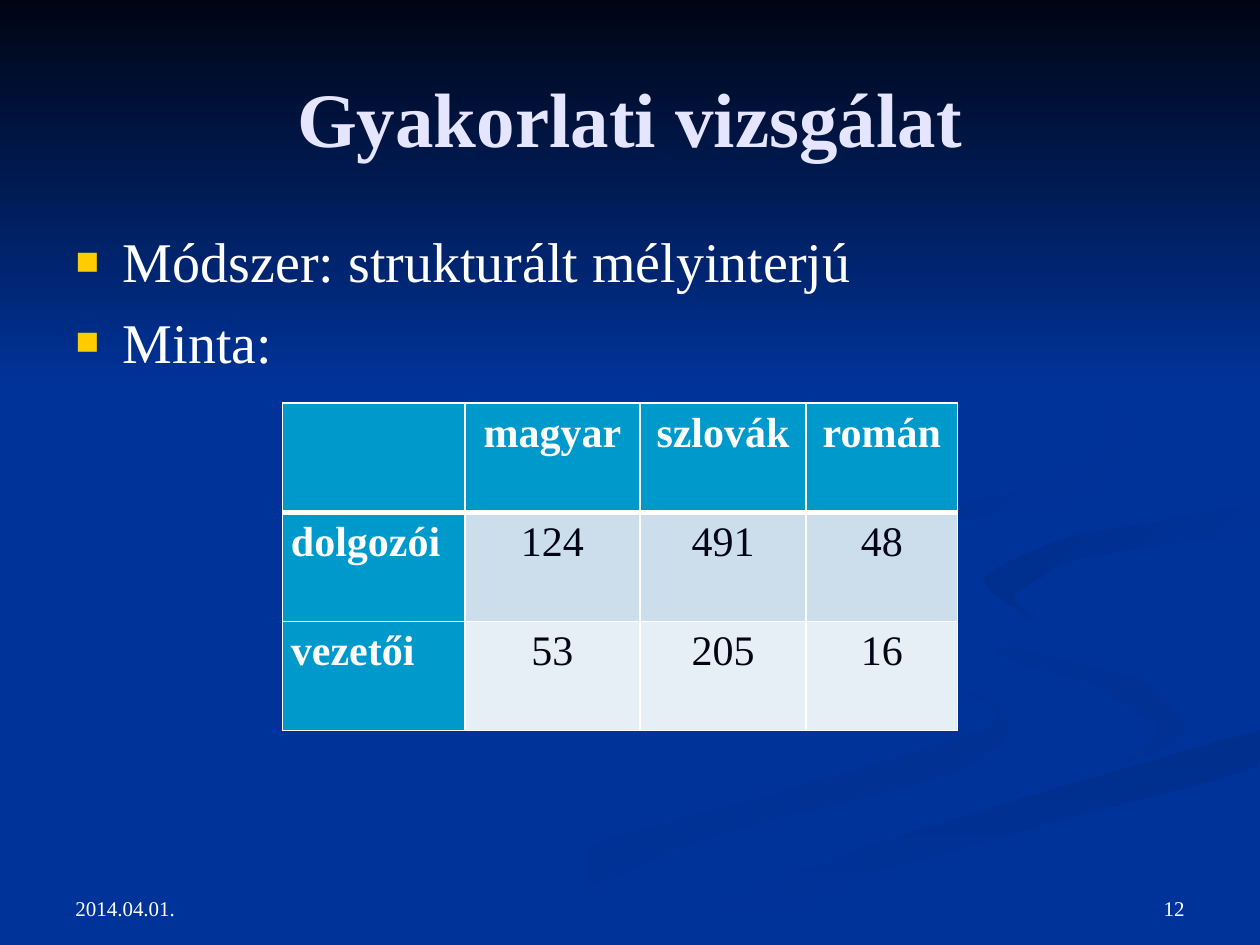
from lxml.etree import SubElement
from pptx import Presentation
from pptx.dml.color import RGBColor
from pptx.enum.shapes import MSO_SHAPE
from pptx.enum.text import MSO_ANCHOR, MSO_AUTO_SIZE, PP_ALIGN
from pptx.oxml.ns import qn
from pptx.util import Pt

FONT = "Times New Roman"
WIDTH, HEIGHT = 720, 540
NAVY = RGBColor(0x00, 0x05, 0x14)
BLUE = RGBColor(0x00, 0x33, 0x99)
BLUE_SHADE = RGBColor(0x00, 0x31, 0x93)
BLUE_DEEP = RGBColor(0x00, 0x2F, 0x8D)
LAVENDER = RGBColor(0xE5, 0xE5, 0xFF)
WHITE = RGBColor(0xFF, 0xFF, 0xFF)
GOLD = RGBColor(0xFF, 0xCC, 0x00)
TEAL = RGBColor(0x00, 0x99, 0xCC)
ROW_FILLS = [RGBColor(0xCC, 0xDE, 0xEC), RGBColor(0xE7, 0xEF, 0xF6)]

# Background ribbons: start colour, end colour, angle, guide points of the outline
RIBBONS = [
    (BLUE, BLUE_SHADE, 0, [
        (414, 330), (428, 349), (491, 374), (562, 400), (562, 417), (444, 453),
        (330, 485), (216, 539), (260, 539), (406, 479), (544, 442), (576, 418),
        (562, 398), (451, 361)]),
    (BLUE, BLUE_SHADE, 45, [
        (521, 334), (552, 369), (625, 392), (661, 418), (644, 436), (678, 418),
        (652, 389), (570, 367)]),
    (BLUE_DEEP, BLUE, 90, [
        (362, 539), (411, 539), (500, 498), (719, 438), (719, 418), (501, 482)]),
    (BLUE_DEEP, BLUE, 45, [
        (562, 331), (595, 357), (580, 340), (618, 319), (719, 302), (719, 289),
        (611, 307)]),
    (BLUE_DEEP, BLUE, 45, [
        (549, 168), (616, 205), (638, 251), (589, 278), (424, 317), (415, 333),
        (448, 360), (429, 332), (492, 310), (616, 282), (644, 248), (607, 198)]),
]
STEPS = 6
TENSION = 0.3

BULLETS = ["Módszer: strukturált mélyinterjú", "Minta:"]
SAMPLE = [
    ["", "magyar", "szlovák", "román"],
    ["dolgozói", "124", "491", "48"],
    ["vezetői", "53", "205", "16"],
]
COLUMN_WIDTHS = [104.4, 100, 95, 86.4]
ROW_HEIGHT = 62.4


def place(shape, left, top, width, height):
    shape.left, shape.top = Pt(left), Pt(top)
    shape.width, shape.height = Pt(width), Pt(height)


def set_font(para, size, color, bold=False):
    font = para.font
    font.name, font.size, font.bold = FONT, Pt(size), bold
    font.color.rgb = color


def paint_gradient(shape, start, end, clockwise_angle):
    shape.shadow.inherit = False
    shape.line.fill.background()
    shape.fill.gradient()
    shape.fill.gradient_angle = -clockwise_angle % 360
    for stop, color, position in zip(shape.fill.gradient_stops, (start, end), (0, 1)):
        stop.color.rgb = color
        stop.position = position


def blend(before, start, end, after, t):
    """One coordinate of a cardinal spline between start and end."""
    leave, arrive = TENSION * (end - before), TENSION * (after - start)
    rise = t * t * (3 - 2 * t)
    return (start + (end - start) * rise
            + leave * t * (1 - t) ** 2 - arrive * t * t * (1 - t))


def smooth(guides):
    """Closed smooth outline through the guide points, kept on the slide."""
    outline = []
    for i in range(len(guides)):
        near = [guides[(i + k) % len(guides)] for k in (-1, 0, 1, 2)]
        for step in range(STEPS):
            x, y = (blend(*axis, step / STEPS) for axis in zip(*near))
            outline.append((min(x, WIDTH), min(y, HEIGHT)))
    return outline


def add_backdrop(page):
    page.background.fill.solid()
    page.background.fill.fore_color.rgb = BLUE
    for start, end, angle, guides in RIBBONS:
        outline = smooth(guides)
        builder = page.shapes.build_freeform(*outline[0], scale=Pt(1))
        builder.add_line_segments(outline[1:], close=True)
        paint_gradient(builder.convert_to_shape(), start, end, angle)
    sky = page.shapes.add_shape(MSO_SHAPE.RECTANGLE, 0, 0, Pt(WIDTH), Pt(222))
    paint_gradient(sky, NAVY, BLUE, 90)


def fill_title(title, text):
    place(title, 36, 21.6, 648, 90)
    frame = title.text_frame
    frame.text = text
    frame.auto_size = MSO_AUTO_SIZE.NONE
    frame.vertical_anchor = MSO_ANCHOR.MIDDLE
    frame.paragraphs[0].alignment = PP_ALIGN.CENTER
    set_font(frame.paragraphs[0], 44, LAVENDER, bold=True)


def fill_bullets(body, lines):
    place(body, 36, 126, 648, 356.4)
    frame = body.text_frame
    frame.text = "\n".join(lines)
    frame.auto_size = MSO_AUTO_SIZE.NONE
    for para in frame.paragraphs:
        para.space_before = Pt(7.5)
        set_font(para, 32, WHITE)
        properties = para._p.get_or_add_pPr()
        properties.set("marL", str(Pt(27)))
        properties.set("indent", str(Pt(-27)))
        # Bullet parts go before the default run properties
        color = properties.makeelement(qn("a:buClr"))
        SubElement(color, qn("a:srgbClr"), val=str(GOLD))
        size = properties.makeelement(qn("a:buSzPct"), val="70000")
        mark = properties.makeelement(qn("a:buChar"), char="■")
        run_defaults = properties.find(qn("a:defRPr"))
        for part in (color, size, mark):
            run_defaults.addprevious(part)


def add_footer(page, left, text, alignment):
    box = page.shapes.add_textbox(Pt(left), Pt(492), Pt(168), Pt(37.5))
    frame = box.text_frame
    frame.word_wrap = True
    frame.vertical_anchor = MSO_ANCHOR.BOTTOM
    para = frame.paragraphs[0]
    para.text, para.alignment = text, alignment
    set_font(para, 12, WHITE)


def add_borders(cell, bottom_width):
    properties = cell._tc.get_or_add_tcPr()
    widths = {"a:lnL": 1, "a:lnR": 1, "a:lnT": 1, "a:lnB": bottom_width}
    for index, (tag, width) in enumerate(widths.items()):
        line = properties.makeelement(qn(tag), w=str(Pt(width)))
        SubElement(SubElement(line, qn("a:solidFill")), qn("a:srgbClr"), val=str(WHITE))
        properties.insert(index, line)


def add_sample_table(page):
    table = page.shapes.add_table(
        len(SAMPLE), len(COLUMN_WIDTHS), Pt(161.3), Pt(230.4),
        Pt(sum(COLUMN_WIDTHS)), Pt(ROW_HEIGHT * len(SAMPLE))).table
    table.first_col = True
    for column, width in zip(table.columns, COLUMN_WIDTHS):
        column.width = Pt(width)
    for i, values in enumerate(SAMPLE):
        table.rows[i].height = Pt(ROW_HEIGHT)
        for j, value in enumerate(values):
            cell = table.cell(i, j)
            heading = i == 0 or j == 0
            cell.margin_left = cell.margin_right = Pt(5)
            cell.margin_top = cell.margin_bottom = 0
            cell.fill.solid()
            cell.fill.fore_color.rgb = TEAL if heading else ROW_FILLS[i - 1]
            add_borders(cell, 3 if i == 0 else 1)
            para = cell.text_frame.paragraphs[0]
            para.text = value
            para.alignment = PP_ALIGN.LEFT if j == 0 else PP_ALIGN.CENTER
            para.line_spacing, para.space_after = 1.15, Pt(10)
            set_font(para, 24, WHITE if heading else NAVY, bold=heading)


def main():
    deck = Presentation()
    deck.slide_width, deck.slide_height = Pt(WIDTH), Pt(HEIGHT)
    page = deck.slides.add_slide(deck.slide_layouts[1])
    title, body = page.placeholders
    add_backdrop(page)
    # Bring the placeholders in front of the backdrop
    page.shapes.element.extend([title.element, body.element])
    fill_title(title, "Gyakorlati vizsgálat")
    fill_bullets(body, BULLETS)
    add_footer(page, 36, "2014.04.01.", PP_ALIGN.LEFT)
    add_footer(page, 516, "12", PP_ALIGN.RIGHT)
    add_sample_table(page)
    deck.save("out.pptx")


if __name__ == "__main__":
    main()
